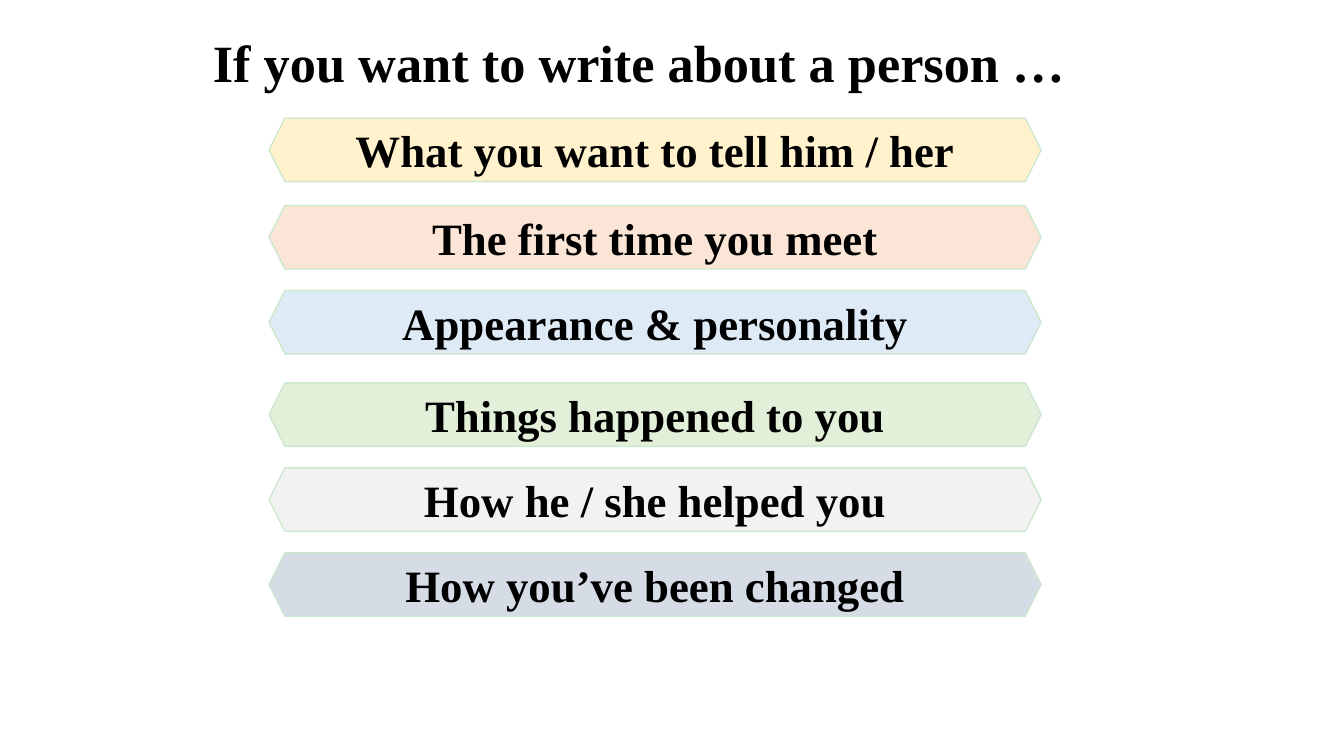
from dataclasses import dataclass

from pptx import Presentation
from pptx.dml import color
from pptx.enum import shapes, text
from pptx.util import Cm, Pt

FONT = "Times New Roman"
BANNER_LEFT, BANNER_WIDTH, BANNER_HEIGHT = 6.78, 19.46, 1.6


@dataclass
class Banner:
    label: str
    top: float
    fill: str


BANNERS = [
    Banner("What you want to tell him / her", 2.98, "FFF2CC"),
    Banner("The first time you meet", 5.18, "FBE5D6"),
    Banner("Appearance & personality", 7.32, "DEEBF7"),
    Banner("Things happened to you", 9.65, "E2F0D9"),
    Banner("How he / she helped you", 11.79, "F2F2F2"),
    Banner("How you’ve been changed", 13.93, "D6DCE5"),
]


def paint(target, value: str) -> None:
    target.rgb = color.RGBColor.from_string(value)


def write(frame, wording: str, size: float, align) -> None:
    frame.text = wording
    para = frame.paragraphs[0]
    para.alignment = align
    font = para.runs[0].font
    font.name, font.size, font.bold = FONT, Pt(size), True
    paint(font.color, "000000")


def place_title(title) -> None:
    title.left, title.top = Cm(5.11), Cm(0.48)
    title.width, title.height = Cm(23.65), Cm(1.85)
    frame = title.text_frame
    frame.word_wrap = True
    frame.auto_size = text.MSO_AUTO_SIZE.NONE
    frame.vertical_anchor = text.MSO_ANCHOR.TOP
    frame.margin_top, frame.margin_bottom = Cm(0.28), Cm(0)
    write(frame, "If you want to write about a person …", 37.4, text.PP_ALIGN.LEFT)


def draw_banner(slide, banner: Banner) -> None:
    box = slide.shapes.add_shape(
        shapes.MSO_SHAPE.HEXAGON,
        Cm(BANNER_LEFT), Cm(banner.top), Cm(BANNER_WIDTH), Cm(BANNER_HEIGHT),
    )
    box.shadow.inherit = False
    box.fill.solid()
    paint(box.fill.fore_color, banner.fill)
    paint(box.line.color, "CCE8CF")
    box.line.width = Pt(1)
    box.text_frame.vertical_anchor = text.MSO_ANCHOR.MIDDLE
    write(box.text_frame, banner.label, 32, text.PP_ALIGN.CENTER)


def main() -> None:
    deck = Presentation()
    deck.slide_width, deck.slide_height = Cm(33.87), Cm(19.05)
    page = deck.slides.add_slide(deck.slide_layouts.get_by_name("Title Only"))
    place_title(page.shapes.title)
    for banner in BANNERS:
        draw_banner(page, banner)
    deck.save("out.pptx")


if __name__ == "__main__":
    main()
